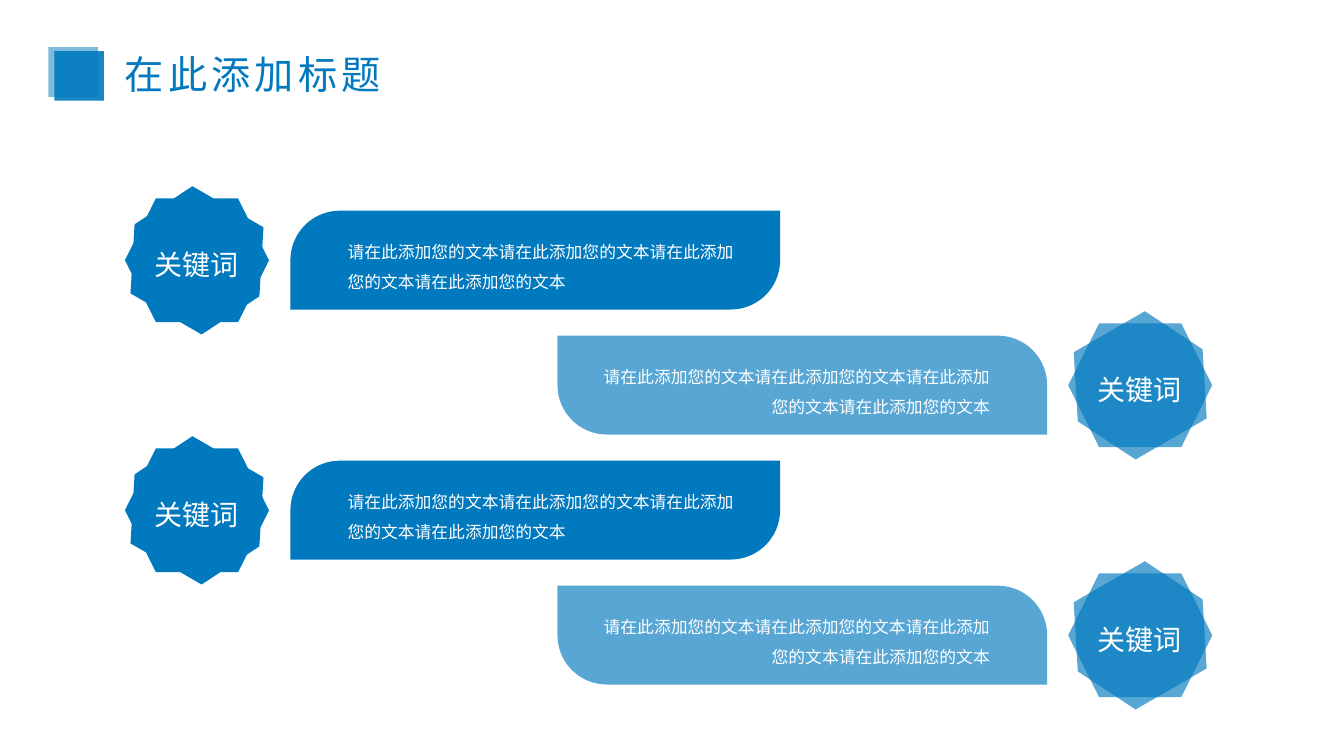
from pptx import Presentation
from pptx.dml.color import RGBColor
from pptx.enum.shapes import MSO_SHAPE as Shape
from pptx.enum.text import MSO_AUTO_SIZE as AutoSize, PP_ALIGN as Align
from pptx.oxml.ns import qn
from pptx.oxml.xmlchemy import OxmlElement
from pptx.util import Cm, Pt

BLUE = RGBColor(0x00, 0x79, 0xBE)
WHITE = RGBColor(0xFF, 0xFF, 0xFF)
FONT = "Noto Sans CJK SC"
BODY = "请在此添加您的文本" * 4
FIRST_ROW_TOP = 5
ROW_PITCH = 3.15


def add_block(shapes, kind, left, top, width, height, opacity=100):
    block = shapes.add_shape(kind, Cm(left), Cm(top), Cm(width), Cm(height))
    block.shadow.inherit = False
    block.line.fill.background()
    block.fill.solid()
    block.fill.fore_color.rgb = BLUE
    if opacity < 100:
        alpha = OxmlElement("a:alpha")
        alpha.set("val", str(opacity * 1000))
        block.element.spPr.find(f".//{qn('a:srgbClr')}").append(alpha)
    return block


def add_text(shapes, text, left, top, width, height, size, color=WHITE,
             align=Align.LEFT, line_spacing=None, letter_spacing=0):
    box = shapes.add_textbox(Cm(left), Cm(top), Cm(width), Cm(height))
    frame = box.text_frame
    frame.word_wrap = True
    frame.auto_size = AutoSize.SHAPE_TO_FIT_TEXT
    paragraph = frame.paragraphs[0]
    paragraph.alignment = align
    paragraph.line_spacing = line_spacing
    run = paragraph.add_run()
    run.text = text
    run.font.size = Pt(size)
    run.font.name = FONT
    run.font.color.rgb = color
    for properties in box.element.iter(qn("a:rPr")):
        east_asian = OxmlElement("a:ea")
        east_asian.set("typeface", FONT)
        properties.find(qn("a:latin")).addnext(east_asian)
        if letter_spacing:
            properties.set("spc", str(letter_spacing * 100))


def add_badge(slide, left, top, rotation, opacity):
    badge = slide.shapes.add_group_shape()
    for angle in (0, rotation):
        hexagon = add_block(badge.shapes, Shape.HEXAGON, left, top, 3.63, 3.12, opacity)
        hexagon.rotation = angle


def add_row(slide, top, badge_left, bar_left, body_left, rotation, opacity, corners, align):
    add_badge(slide, badge_left, top, rotation, opacity)
    bar = add_block(slide.shapes, Shape.ROUND_2_DIAG_RECTANGLE,
                    bar_left, top + 0.31, 12.34, 2.49, opacity)
    bar.adjustments[0], bar.adjustments[1] = corners
    add_text(slide.shapes, "关键词", badge_left + 0.46, top + 1.1, 2.7, 1.11, 20,
             align=Align.CENTER)
    add_text(slide.shapes, BODY, body_left, top + 0.71, 10.49, 1.73, 12,
             align=align, line_spacing=1.5)


def add_heading(slide):
    heading = slide.shapes.add_group_shape()
    add_block(heading.shapes, Shape.RECTANGLE, 1.22, 1.19, 1.25, 1.25, 51)
    add_block(heading.shapes, Shape.RECTANGLE, 1.37, 1.29, 1.25, 1.25, 90)
    add_text(heading.shapes, "在此添加标题", 2.9, 1.14, 7.67, 1.45, 28, color=BLUE,
             align=Align.JUSTIFY, letter_spacing=3)


def main():
    deck = Presentation()
    deck.slide_width, deck.slide_height = Cm(33.87), Cm(19.05)
    slide = deck.slides.add_slide(deck.slide_layouts[6])
    left_row = dict(badge_left=3.15, bar_left=7.32, body_left=8.51, rotation=30,
                    opacity=100, corners=(0.5, 0), align=Align.LEFT)
    right_row = dict(badge_left=26.92, bar_left=14.05, body_left=14.71, rotation=330,
                     opacity=66, corners=(0, 0.5), align=Align.RIGHT)
    for index, row in enumerate((left_row, right_row) * 2):
        add_row(slide, FIRST_ROW_TOP + index * ROW_PITCH, **row)
    add_heading(slide)
    deck.save("out.pptx")


if __name__ == "__main__":
    main()
